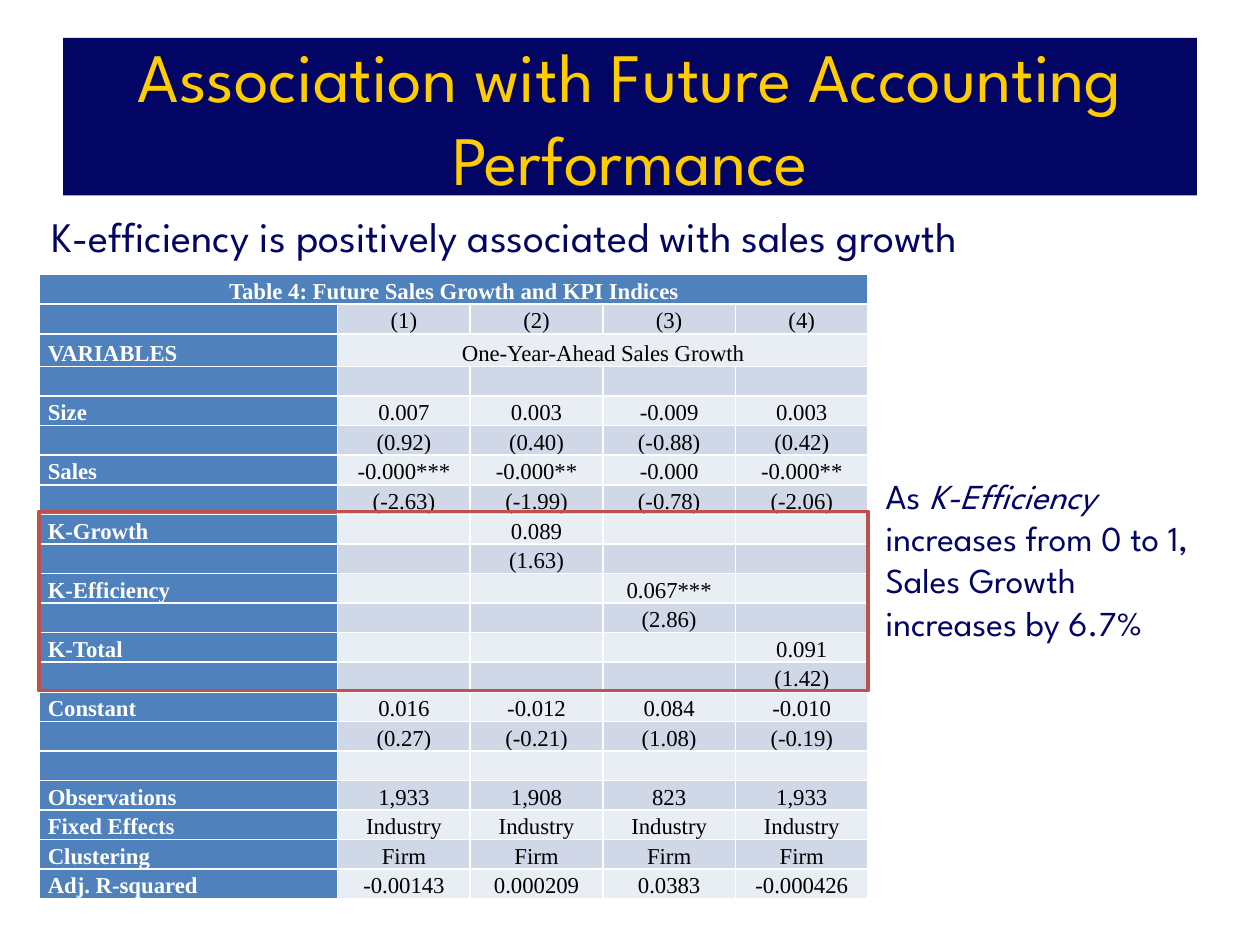
from pptx import Presentation
from pptx.dml.color import RGBColor
from pptx.enum.shapes import MSO_SHAPE
from pptx.enum.text import MSO_ANCHOR, MSO_AUTO_SIZE, PP_ALIGN
from pptx.util import Inches, Pt

RECTANGLE = MSO_SHAPE.RECTANGLE
MIDDLE, BOTTOM = MSO_ANCHOR.MIDDLE, MSO_ANCHOR.BOTTOM
LEFT, CENTER = PP_ALIGN.LEFT, PP_ALIGN.CENTER
NO_AUTOFIT = MSO_AUTO_SIZE.NONE
HEADING_FONT, TABLE_FONT = "League Spartan", "Times New Roman"
NAVY, GOLD, RED, WHITE, BLACK = "030565", "FFCC00", "C0504D", "FFFFFF", "000000"
BLUE, DARK_BAND, LIGHT_BAND = "4F81BD", "D0D8E8", "E9EDF4"


def color(value):
    return RGBColor.from_string(value)


def format_runs(paragraph, name, size, value, bold=False):
    for run in paragraph.runs:
        run.font.name = name
        run.font.size = Pt(size)
        run.font.bold = bold
        run.font.color.rgb = color(value)


presentation = Presentation()
presentation.slide_width = Inches(10)
presentation.slide_height = Inches(7.5)
slide = presentation.slides.add_slide(presentation.slide_layouts[5])

title = slide.shapes.title
title.left, title.top = Inches(0.5), Inches(0.3)
title.width, title.height = Inches(9), Inches(1.25)
title.fill.solid()
title.fill.fore_color.rgb = color(NAVY)
title.text_frame.text = "Association with Future Accounting Performance"
title.text_frame.auto_size = NO_AUTOFIT
title.text_frame.vertical_anchor = MIDDLE
title.text_frame.paragraphs[0].alignment = CENTER
format_runs(title.text_frame.paragraphs[0], HEADING_FONT, 39.6, GOLD)

finding = slide.shapes.add_textbox(Inches(0.31), Inches(1.62), Inches(9.41), Inches(5.65))
finding.text_frame.word_wrap = True
finding.text_frame.text = "K-efficiency is positively associated with sales growth"
finding.text_frame.paragraphs[0].space_before = Pt(4.8)
format_runs(finding.text_frame.paragraphs[0], HEADING_FONT, 24, NAVY)

interpretation = slide.shapes.add_textbox(Inches(6.93), Inches(3.72), Inches(2.76), Inches(1.45))
interpretation.text_frame.word_wrap = True
paragraph = interpretation.text_frame.paragraphs[0]
for text in ("As ", "K-Efficiency", " increases from 0 to 1, Sales Growth increases by 6.7%"):
    run = paragraph.add_run()
    run.text = text
    run.font.italic = text == "K-Efficiency"
format_runs(paragraph, HEADING_FONT, 20, NAVY)

rows = [
    ("Table 4: Future Sales Growth and KPI Indices", "", "", "", ""),
    ("", "(1)", "(2)", "(3)", "(4)"),
    ("VARIABLES", "One-Year-Ahead Sales Growth", "", "", ""),
    ("", "", "", "", ""),
    ("Size", "0.007", "0.003", "-0.009", "0.003"),
    ("", "(0.92)", "(0.40)", "(-0.88)", "(0.42)"),
    ("Sales", "-0.000***", "-0.000**", "-0.000", "-0.000**"),
    ("", "(-2.63)", "(-1.99)", "(-0.78)", "(-2.06)"),
    ("K-Growth", "", "0.089", "", ""),
    ("", "", "(1.63)", "", ""),
    ("K-Efficiency", "", "", "0.067***", ""),
    ("", "", "", "(2.86)", ""),
    ("K-Total", "", "", "", "0.091"),
    ("", "", "", "", "(1.42)"),
    ("Constant", "0.016", "-0.012", "0.084", "-0.010"),
    ("", "(0.27)", "(-0.21)", "(1.08)", "(-0.19)"),
    ("", "", "", "", ""),
    ("Observations", "1,933", "1,908", "823", "1,933"),
    ("Fixed Effects", "Industry", "Industry", "Industry", "Industry"),
    ("Clustering", "Firm", "Firm", "Firm", "Firm"),
    ("Adj. R-squared", "-0.00143", "0.000209", "0.0383", "-0.000426"),
]
table_left, table_top, table_width, table_height = Inches(0.31), Inches(2.18), Inches(6.58), Inches(4.96)
table = slide.shapes.add_table(len(rows), 5, table_left, table_top, table_width, table_height).table
table.first_col = True

label_width = Inches(2.37)
for index, column in enumerate(table.columns):
    column.width = label_width if index == 0 else (table_width - label_width) // 4
variables_height = Inches(0.26)
for index, row in enumerate(table.rows):
    row.height = variables_height if index == 2 else (table_height - variables_height) // (len(rows) - 1)

for row_index, values in enumerate(rows):
    for column_index, text in enumerate(values):
        cell = table.cell(row_index, column_index)
        is_heading = row_index == 0 or column_index == 0
        band = DARK_BAND if row_index % 2 else LIGHT_BAND
        cell.fill.solid()
        cell.fill.fore_color.rgb = color(BLUE if is_heading else band)
        cell.vertical_anchor = BOTTOM
        cell.margin_left = cell.margin_right = Inches(0.07)
        cell.margin_top = cell.margin_bottom = 0
        paragraph = cell.text_frame.paragraphs[0]
        paragraph.alignment = LEFT if column_index == 0 and row_index > 0 else CENTER
        if text:
            paragraph.text = text
            format_runs(paragraph, TABLE_FONT, 13, WHITE if is_heading else BLACK, is_heading)
        else:
            paragraph._p.get_or_add_endParaRPr().set("sz", "1300")

table.cell(0, 0).merge(table.cell(0, 4))
table.cell(2, 1).merge(table.cell(2, 4))

highlight = slide.shapes.add_shape(RECTANGLE, table_left, Inches(4.06), table_width, Inches(1.42))
highlight.shadow.inherit = False
highlight.fill.background()
highlight.line.color.rgb = color(RED)
highlight.line.width = Pt(2)

presentation.save("out.pptx")
